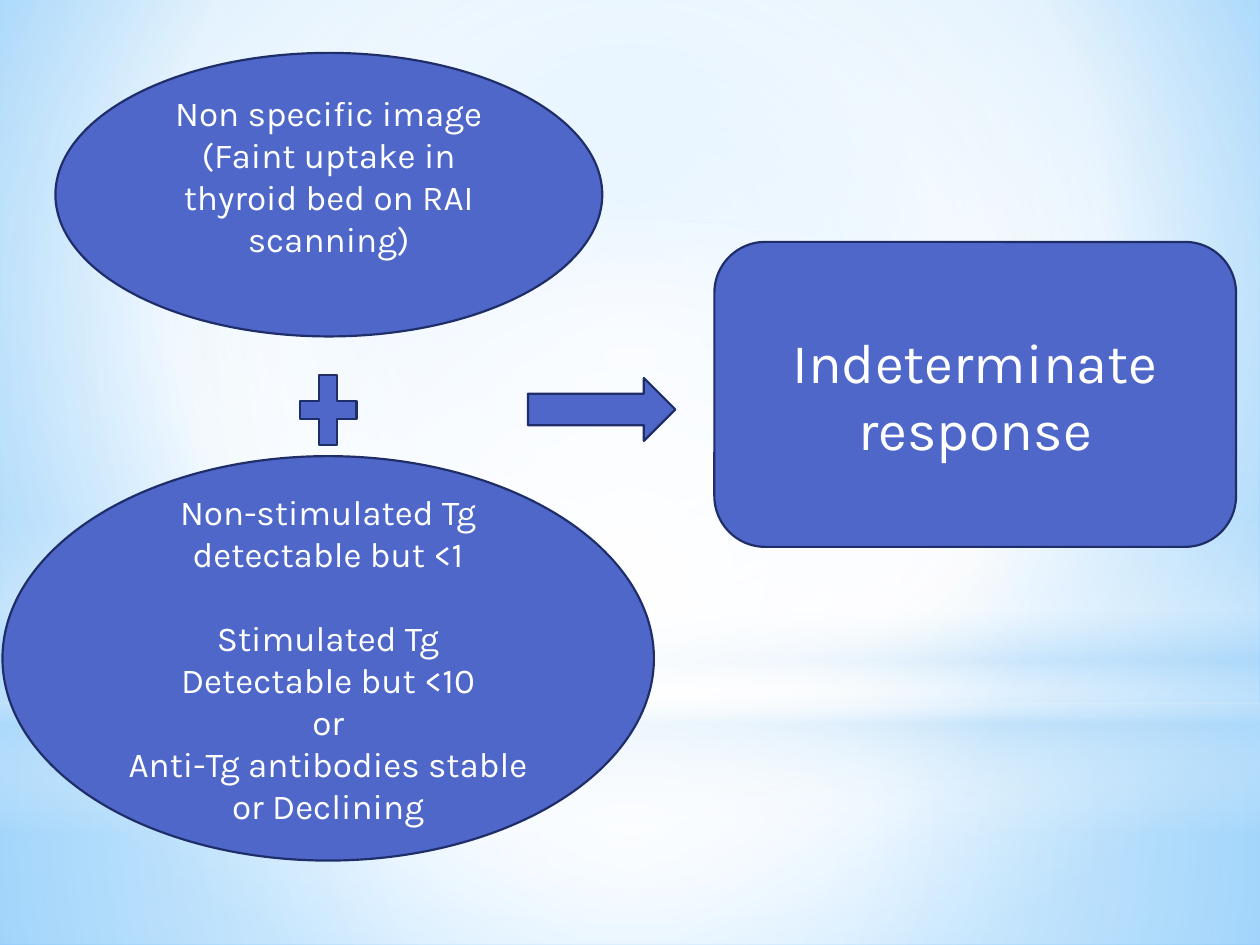
import dataclasses

import lxml.etree
import pptx
import pptx.dml.color
import pptx.enum.shapes
import pptx.enum.text
import pptx.oxml.ns
import pptx.util

Inches = pptx.util.Inches
Pt = pptx.util.Pt
qn = pptx.oxml.ns.qn
Shapes = pptx.enum.shapes.MSO_SHAPE


@dataclasses.dataclass(frozen=True)
class Theme:
    font: str = "Karla"
    fill: str = "4E67C8"
    line: str = "1F2E69"
    text: str = "FFFFFF"
    glow: str = "FFFFFF"
    haze: str = "B4DCFA"
    sky: str = "9ED5FF"
    deep_sky: str = "5BB9FF"
    body_size: int = 20
    result_size: int = 32
    line_width: float = 1.25


THEME = Theme()
CENTRE = (50, 50, 50, 50)


def rgb(color):
    return pptx.dml.color.RGBColor.from_string(color)


def gradient(stops, focus=None, angle=0):
    """Gradient of (position %, colour, opacity %): circular with a focus, else linear."""
    fill = lxml.etree.Element(qn("a:gradFill"), rotWithShape="1")
    stop_list = lxml.etree.SubElement(fill, qn("a:gsLst"))
    for position, color, opacity in stops:
        stop = lxml.etree.SubElement(stop_list, qn("a:gs"), pos=str(position * 1000))
        tint = lxml.etree.SubElement(stop, qn("a:srgbClr"), val=color)
        if opacity < 100:
            lxml.etree.SubElement(tint, qn("a:alpha"), val=str(opacity * 1000))
    if focus:
        circle = lxml.etree.SubElement(fill, qn("a:path"), {"path": "circle"})
        sides = {side: str(share * 1000) for side, share in zip("ltrb", focus)}
        lxml.etree.SubElement(circle, qn("a:fillToRect"), sides)
    else:
        lxml.etree.SubElement(fill, qn("a:lin"), ang=str(angle * 60000), scaled="0")
    return fill


def replace_solid_fill(parent, fill):
    solid = parent.find(qn("a:solidFill"))
    parent.replace(solid, fill)


def set_background(slide, fill):
    slide.background.fill.solid()
    properties = next(slide.background._cSld.iter(qn("p:bgPr")))
    replace_solid_fill(properties, fill)


def add_shape(slide, kind, box):
    shape = slide.shapes.add_shape(kind, *(Inches(length) for length in box))
    shape.shadow.inherit = False
    shape.fill.solid()
    shape.fill.fore_color.rgb = rgb(THEME.fill)
    return shape


def add_backdrop(slide, kind, top, height, fill):
    shape = add_shape(slide, kind, (0, top, 10, height))
    shape.line.fill.background()
    replace_solid_fill(shape._element.spPr, fill)


def add_node(slide, kind, box):
    shape = add_shape(slide, kind, box)
    shape.line.color.rgb = rgb(THEME.line)
    shape.line.width = Pt(THEME.line_width)
    return shape


def add_text(shape, lines, size, gap_before=None):
    """Centred paragraphs; gap_before is the line that starts a new group."""
    frame = shape.text_frame
    frame.word_wrap = True
    frame.vertical_anchor = pptx.enum.text.MSO_ANCHOR.MIDDLE
    for index, line in enumerate(lines):
        paragraph = frame.add_paragraph() if index else frame.paragraphs[0]
        paragraph.alignment = pptx.enum.text.PP_ALIGN.CENTER
        if line == gap_before:
            paragraph.space_before = Pt(size * 1.2)
        run = paragraph.add_run()
        run.text = line
        run.font.name = THEME.font
        run.font.size = Pt(size)
        run.font.color.rgb = rgb(THEME.text)


def draw_backdrop(slide):
    glow, haze = THEME.glow, THEME.haze
    set_background(slide, gradient(
        [(0, THEME.sky, 100), (60, glow, 100), (100, THEME.deep_sky, 100)], (20, 10, 20, 60)))
    add_backdrop(slide, Shapes.RECTANGLE, 5.58, 1.92, gradient(
        [(0, glow, 91), (37, glow, 76), (100, haze, 79)], CENTRE))
    add_backdrop(slide, Shapes.RECTANGLE, 0, 5.58, gradient(
        [(0, glow, 89), (48, glow, 62), (100, haze, 79)], CENTRE))
    add_backdrop(slide, Shapes.RECTANGLE, 4.12, 2.5, gradient(
        [(0, glow, 0), (29, glow, 30), (45, haze, 40),
         (55, glow, 26), (65, haze, 60), (100, glow, 0)], angle=90))
    add_backdrop(slide, Shapes.OVAL, 1.75, 5.58, gradient(
        [(0, glow, 100), (56, glow, 0)], CENTRE))


def main():
    presentation = pptx.Presentation()
    presentation.slide_width, presentation.slide_height = Inches(10), Inches(7.5)
    slide = presentation.slides.add_slide(presentation.slide_layouts[6])
    draw_backdrop(slide)

    # Imaging finding, its text raised a little above the middle
    imaging = add_node(slide, Shapes.OVAL, (0.44, 0.42, 4.34, 2.25))
    add_text(imaging, ["Non specific image (Faint uptake in thyroid bed on RAI scanning)"],
             THEME.body_size)
    imaging.text_frame.margin_bottom = Inches(0.35)

    # Laboratory findings
    laboratory = add_node(slide, Shapes.OVAL, (0.02, 3.62, 5.17, 3.21))
    add_text(laboratory, [
        "Non-stimulated Tg detectable but <1",
        "Stimulated Tg",
        "Detectable but <10",
        "or",
        "Anti-Tg antibodies stable or Declining",
    ], THEME.body_size, gap_before="Stimulated Tg")

    # Resulting response
    response = add_node(slide, Shapes.ROUNDED_RECTANGLE, (5.67, 1.92, 4.14, 2.42))
    add_text(response, ["Indeterminate response"], THEME.result_size)

    # Plus sign and arrow between the findings and the response
    add_node(slide, Shapes.MATH_PLUS, (2.3, 2.88, 0.61, 0.75))
    add_node(slide, Shapes.RIGHT_ARROW, (4.19, 3, 1.17, 0.5))

    presentation.save("out.pptx")


if __name__ == "__main__":
    main()
